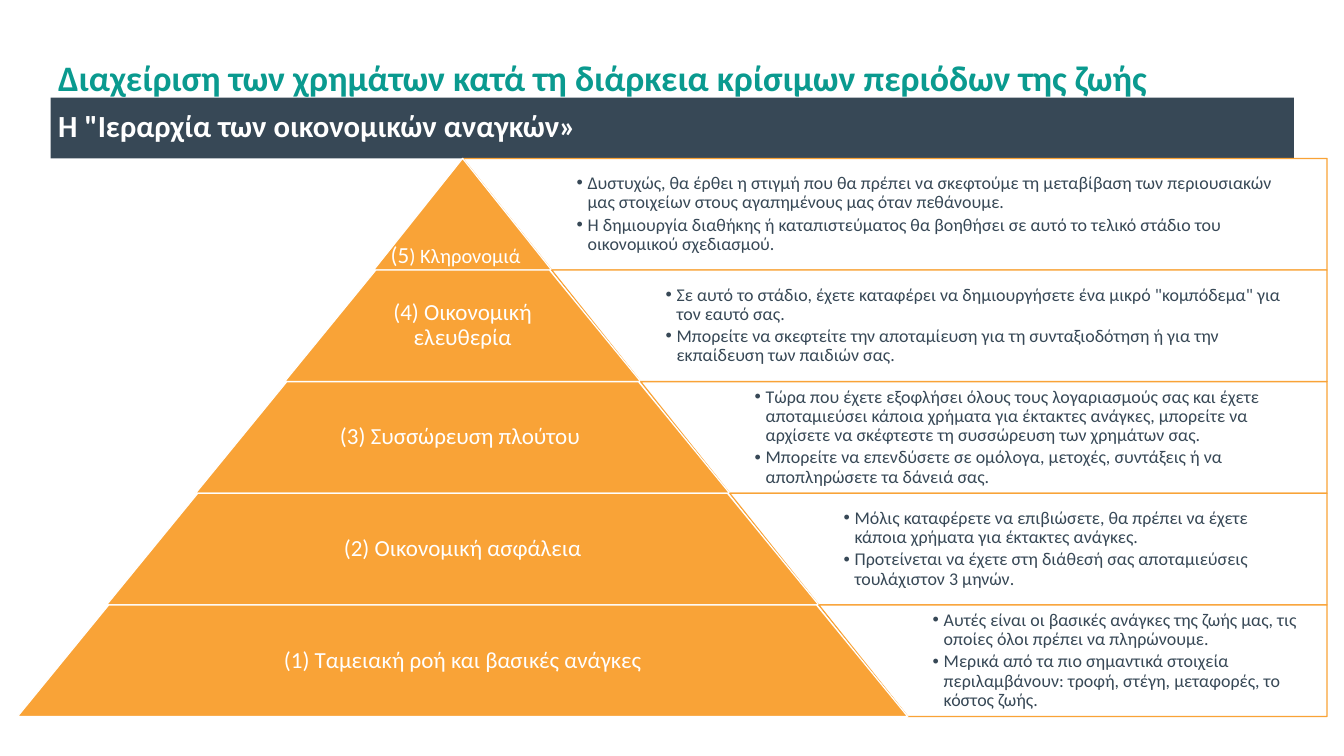
from dataclasses import dataclass

from lxml.etree import SubElement
from pptx import Presentation
from pptx.dml.color import RGBColor
from pptx.enum.shapes import MSO_SHAPE as Preset
from pptx.enum.text import MSO_ANCHOR as Anchor, MSO_AUTO_SIZE as AutoSize, PP_ALIGN as Align
from pptx.oxml.ns import qn
from pptx.util import Inches, Pt


@dataclass(frozen=True)
class Theme:
    font: str = "Calibri"
    teal: RGBColor = RGBColor(0x0A, 0x9A, 0x8F)
    slate: RGBColor = RGBColor(0x37, 0x48, 0x56)
    orange: RGBColor = RGBColor(0xF9, 0xA3, 0x37)
    white: RGBColor = RGBColor(0xFF, 0xFF, 0xFF)
    title: int = 28
    subtitle: int = 24
    label: int = 18
    top_label: int = 16
    note: int = 14


@dataclass(frozen=True)
class Box:
    left: float
    top: float
    width: float
    height: float

    @property
    def inches(self):
        return [Inches(value) for value in (self.left, self.top, self.width, self.height)]


THEME = Theme()
TITLE = "Διαχείριση των χρημάτων κατά τη διάρκεια κρίσιμων περιόδων της ζωής"
SUBTITLE = 'Η "Ιεραρχία των οικονομικών αναγκών» '
# From the top of the pyramid down: label runs, then notes
LEVELS = [
    (["(5", ") Κληρονομιά "], [
        "Δυστυχώς, θα έρθει η στιγμή που θα πρέπει να σκεφτούμε τη μεταβίβαση των "
        "περιουσιακών μας στοιχείων στους αγαπημένους μας όταν πεθάνουμε.",
        "Η δημιουργία διαθήκης ή καταπιστεύματος θα βοηθήσει σε αυτό το τελικό στάδιο "
        "του οικονομικού σχεδιασμού."]),
    (["(4) Οικονομική ελευθερία"], [
        'Σε αυτό το στάδιο, έχετε καταφέρει να δημιουργήσετε ένα μικρό "κομπόδεμα" για '
        "τον εαυτό σας.",
        "Μπορείτε να σκεφτείτε την αποταμίευση για τη συνταξιοδότηση ή για την "
        "εκπαίδευση των παιδιών σας."]),
    (["(3) Συσσώρευση πλούτου "], [
        "Τώρα που έχετε εξοφλήσει όλους τους λογαριασμούς σας και έχετε αποταμιεύσει "
        "κάποια χρήματα για έκτακτες ανάγκες, μπορείτε να αρχίσετε να σκέφτεστε τη "
        "συσσώρευση των χρημάτων σας.",
        "Μπορείτε να επενδύσετε σε ομόλογα, μετοχές, συντάξεις ή να αποπληρώσετε τα "
        "δάνειά σας."]),
    (["(2) Οικονομική ασφάλεια"], [
        "Μόλις καταφέρετε να επιβιώσετε, θα πρέπει να έχετε κάποια χρήματα για έκτακτες "
        "ανάγκες.",
        "Προτείνεται να έχετε στη διάθεσή σας αποταμιεύσεις τουλάχιστον 3 μηνών."]),
    (["(1) Ταμειακή ροή και βασικές ανάγκες"], [
        "Αυτές είναι οι βασικές ανάγκες της ζωής μας, τις οποίες όλοι πρέπει να πληρώνουμε.",
        "Μερικά από τα πιο σημαντικά στοιχεία περιλαμβάνουν: τροφή, στέγη, μεταφορές, το "
        "κόστος ζωής."]),
]


def style_shape(shape, fill, line=None):
    shape.shadow.inherit = False
    shape.fill.solid()
    shape.fill.fore_color.rgb = fill
    if line is None:
        shape.line.fill.background()
    else:
        shape.line.color.rgb = line
        shape.line.width = Pt(1)


def prepare_frame(shape, left, top, right, bottom):
    """Wrap and centre the text vertically, with margins in inches."""
    frame = shape.text_frame
    frame.word_wrap = True
    frame.auto_size = AutoSize.NONE
    frame.vertical_anchor = Anchor.MIDDLE
    frame.margin_left, frame.margin_top = Inches(left), Inches(top)
    frame.margin_right, frame.margin_bottom = Inches(right), Inches(bottom)
    return frame


def format_paragraph(paragraph, size, color, align=Align.LEFT, bold=False):
    paragraph.alignment = align
    paragraph.line_spacing = 0.9
    font = paragraph.font
    font.name, font.size, font.bold = THEME.font, Pt(size), bold
    font.color.rgb = color


def add_bullet(paragraph):
    properties = paragraph._p.get_or_add_pPr()
    properties.set("marL", str(Inches(0.12)))
    properties.set("indent", str(Inches(-0.12)))
    SubElement(properties, qn("a:buFont")).set("typeface", "Arial")
    SubElement(properties, qn("a:buChar")).set("char", "•")


def add_heading(slide, box):
    """Title with the dark subtitle banner across the foot of the box."""
    title = slide.shapes.title
    title.left, title.top, title.width, title.height = Box(
        box.left, box.top, box.width, 0.79).inches
    banner_box = Box(box.left, box.top + box.height - 0.66, box.width, 0.66)
    banner = slide.shapes.add_shape(Preset.RECTANGLE, *banner_box.inches)
    style_shape(banner, THEME.slate)
    for shape, text, size, color, align in (
        (title, TITLE, THEME.title, THEME.teal, Align.LEFT),
        (banner, SUBTITLE, THEME.subtitle, THEME.white, Align.JUSTIFY),
    ):
        frame = prepare_frame(shape, 0.08, 0.05, 0.08, 0.05)
        frame.text = text
        format_paragraph(frame.paragraphs[0], size, color, align, bold=True)


def add_notes_panel(slide, box, slant, notes):
    """Panel whose left edge follows the side of the pyramid."""
    right, bottom = box.left + box.width, box.top + box.height
    builder = slide.shapes.build_freeform(Inches(box.left), Inches(box.top))
    corners = [(right, box.top), (right, bottom), (box.left + slant, bottom)]
    builder.add_line_segments([(Inches(x), Inches(y)) for x, y in corners])
    panel = builder.convert_to_shape()
    style_shape(panel, THEME.white, THEME.orange)
    frame = prepare_frame(panel, slant + 0.27, 0.05, 0.27, 0.05)
    for index, note in enumerate(notes):
        paragraph = frame.add_paragraph() if index else frame.paragraphs[0]
        paragraph.text = note
        format_paragraph(paragraph, THEME.note, THEME.slate)
        paragraph.space_before = Pt(2.1 if index else 0)
        add_bullet(paragraph)


def add_band(slide, box):
    band = slide.shapes.add_shape(Preset.TRAPEZOID, *box.inches)
    band.adjustments[0] = 0.817
    style_shape(band, THEME.orange, THEME.white)


def add_label(slide, box, runs):
    label = slide.shapes.add_textbox(*box.inches)
    paragraph = prepare_frame(label, 0.02, 0.02, 0.02, 0.02).paragraphs[0]
    for text in runs:
        paragraph.add_run().text = text
    format_paragraph(paragraph, THEME.label, THEME.white, Align.CENTER)
    for run in paragraph.runs[1:]:
        run.font.size = Pt(THEME.top_label)


def add_pyramid(slide, box, pyramid_width):
    """Pyramid at the left of the box, with one notes panel beside each level."""
    height = box.height / len(LEVELS)
    slant = pyramid_width / 2 / len(LEVELS)
    center = box.left + pyramid_width / 2
    for level, (runs, notes) in enumerate(LEVELS):
        top = box.top + level * height
        edge = center + level * slant
        half_width = (level + 1) * slant
        add_notes_panel(slide, Box(edge, top, box.left + box.width - edge, height), slant, notes)
        add_band(slide, Box(center - half_width, top, 2 * half_width, height))
        if level == 0:
            # The narrow tip needs a lower, wider label
            label_box = Box(center - 0.87, top + 0.45, 1.64, height)
        else:
            label_box = Box(center - 0.65 * half_width, top, 1.3 * half_width, height)
        add_label(slide, label_box, runs)


def main():
    presentation = Presentation()
    presentation.slide_width, presentation.slide_height = Pt(1050), Pt(591)
    slide = presentation.slides.add_slide(presentation.slide_layouts[5])
    add_heading(slide, Box(0.55, 0.47, 13.49, 1.25))
    add_pyramid(slide, Box(0.19, 1.72, 14.21, 6.06), pyramid_width=9.66)
    presentation.save("out.pptx")


if __name__ == "__main__":
    main()
